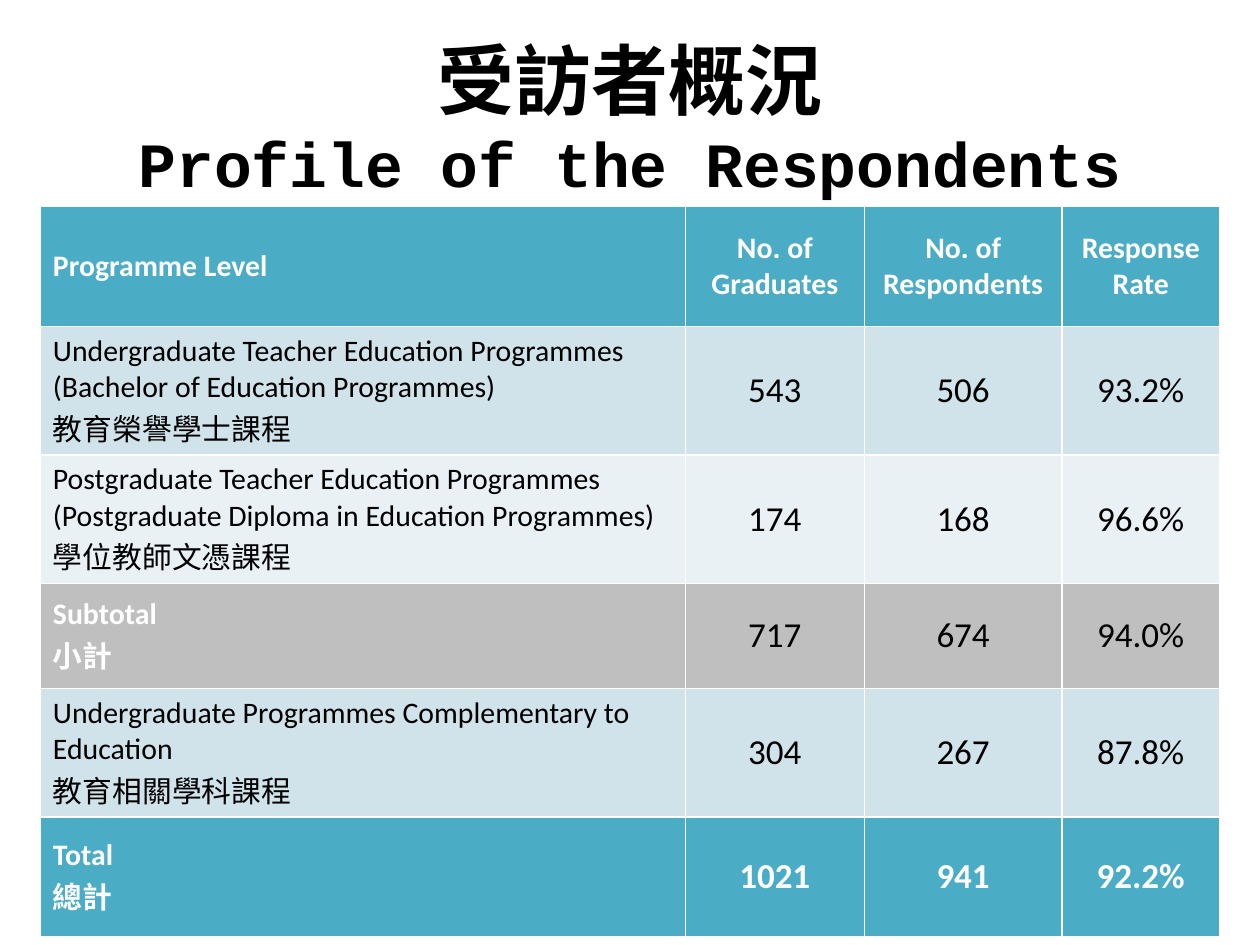
from pptx import Presentation, util as u
from pptx.dml.color import RGBColor
from pptx.enum import text

WHITE, BLACK = "FFFFFF", "000000"
TEAL, PALE, PALER, GREY = "4BACC6", "D0E3EA", "E9F1F5", "BFBFBF"

COLUMN_WIDTHS = [368.64, 102.24, 113.04, 90]
HEADINGS = ["Programme Level", "No. of Graduates", "No. of Respondents", "Response Rate"]

# \v breaks a line, \n starts a paragraph.
# Each row: height, fill, label colour, figure colour, cell texts
ROWS = [
    (68.4, TEAL, WHITE, WHITE, HEADINGS),
    (68.4, PALE, BLACK, BLACK,
     ["Undergraduate Teacher Education Programmes\v"
      "(Bachelor of Education Programmes)\v教育榮譽學士課程", "543", "506", "93.2%"]),
    (68.4, PALER, BLACK, BLACK,
     ["Postgraduate Teacher Education Programmes\v"
      "(Postgraduate Diploma in Education Programmes) 學位教師文憑課程",
      "174", "168", "96.6%"]),
    (59.76, GREY, WHITE, BLACK, ["Subtotal\n小計", "717", "674", "94.0%"]),
    (68.4, PALE, BLACK, BLACK,
     ["Undergraduate Programmes Complementary to Education\n教育相關學科課程",
      "304", "267", "87.8%"]),
    (68.4, TEAL, WHITE, WHITE, ["Total \v總計", "1021", "941", "92.2%"]),
]


def rgb(hex_color):
    return RGBColor.from_string(hex_color)


def format_font(font, name, size, color, bold):
    font.name = name
    font.size = u.Pt(size)
    font.bold = bold
    font.color.rgb = rgb(color)


def add_title(slide):
    title = slide.shapes.title
    title.left, title.top = u.Pt(36), u.Pt(21.6)
    title.width, title.height = u.Pt(648), u.Pt(90)
    title.text_frame.vertical_anchor = text.MSO_ANCHOR.MIDDLE
    paragraph = title.text_frame.paragraphs[0]
    paragraph.alignment = text.PP_ALIGN.CENTER

    chinese = paragraph.add_run()
    chinese.text = "受訪者概況"
    format_font(chinese.font, "Calibri", 44, BLACK, True)
    paragraph.add_line_break()
    english = paragraph.add_run()
    english.text = "Profile of the Respondents"
    format_font(english.font, "Courier New", 36, BLACK, True)


def fill_cell(cell, content, fill, size, color, alignment):
    cell.fill.solid()
    cell.fill.fore_color.rgb = rgb(fill)
    cell.vertical_anchor = text.MSO_ANCHOR.MIDDLE
    cell.text_frame.text = content
    for paragraph in cell.text_frame.paragraphs:
        paragraph.alignment = alignment
        format_font(paragraph.font, "Calibri", size, color, color == WHITE)


def add_response_table(slide):
    """The default table style supplies the white rules, thicker by the first and last rows."""
    heights = [row[0] for row in ROWS]
    table = slide.shapes.add_table(
        len(ROWS), len(COLUMN_WIDTHS), u.Pt(23.04), u.Pt(118.08),
        u.Pt(sum(COLUMN_WIDTHS)), u.Pt(sum(heights))).table
    table.last_row = True
    for column, width in zip(table.columns, COLUMN_WIDTHS):
        column.width = u.Pt(width)

    for r, (height, fill, label_color, figure_color, contents) in enumerate(ROWS):
        table.rows[r].height = u.Pt(height)
        for c, content in enumerate(contents):
            size = 17 if r == 0 or c == 0 else 20
            color = label_color if c == 0 else figure_color
            alignment = text.PP_ALIGN.LEFT if c == 0 else text.PP_ALIGN.CENTER
            fill_cell(table.cell(r, c), content, fill, size, color, alignment)


def main():
    deck = Presentation()
    deck.slide_width, deck.slide_height = u.Pt(720), u.Pt(540)
    slide = deck.slides.add_slide(deck.slide_layouts[5])
    add_title(slide)
    add_response_table(slide)
    deck.save("out.pptx")


if __name__ == "__main__":
    main()
